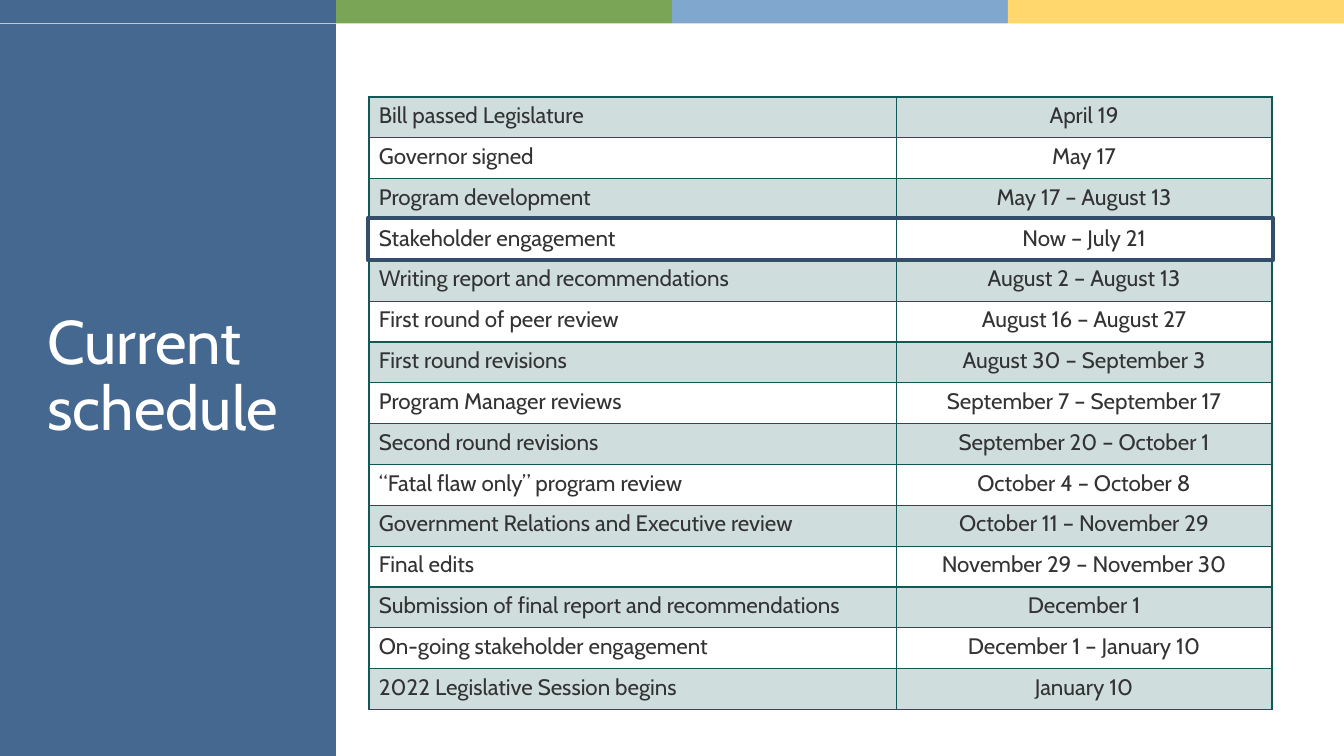
from dataclasses import dataclass

from lxml import etree
from pptx import Presentation
from pptx import util as u
from pptx.dml.color import RGBColor
from pptx.enum import shapes, text
from pptx.oxml.ns import qn

SLIDE_WIDTH = u.Inches(40 / 3)
SLIDE_HEIGHT = u.Inches(7.5)
FONT = "Cabin"

BLUE = RGBColor(0x44, 0x68, 0x8F)
GREEN = RGBColor(0x7A, 0xA4, 0x56)
LIGHT_BLUE = RGBColor(0x80, 0xA8, 0xCE)
YELLOW = RGBColor(0xFF, 0xD7, 0x6D)
TEAL = RGBColor(0x13, 0x57, 0x56)
NAVY = RGBColor(0x33, 0x4E, 0x6B)
INK = RGBColor(0x33, 0x33, 0x33)
WHITE = RGBColor(0xFF, 0xFF, 0xFF)


@dataclass(frozen=True)
class Area:
    """Position and size as percentages of the slide."""
    left: float
    top: float
    width: float
    height: float

    def emu(self) -> tuple[int, int, int, int]:
        return (across(self.left), down(self.top),
                across(self.width), down(self.height))


@dataclass(frozen=True)
class Step:
    task: str
    dates: str


def across(percent: float) -> int:
    return round(SLIDE_WIDTH * percent / 100)


def down(percent: float) -> int:
    return round(SLIDE_HEIGHT * percent / 100)


STRIPE_COLOURS = [BLUE, GREEN, LIGHT_BLUE, YELLOW]
STRIPE_WIDTH = 100 / len(STRIPE_COLOURS)
SIDEBAR = Area(0, 3.2, STRIPE_WIDTH, 96.8)
TITLE = Area(2.78, 10, 19.88, 79.87)
SCHEDULE = Area(27.45, 12.83, 67.2, 81.07)
COLUMN_WIDTHS = [39.23, 27.97]
CURRENT_STEP = Area(27.38, 28.8, 67.35, 5.6)

STEPS = [
    Step("Bill passed Legislature", "April 19"),
    Step("Governor signed", "May 17"),
    Step("Program development", "May 17 – August 13"),
    Step("Stakeholder engagement", "Now – July 21"),
    Step("Writing report and recommendations", "August 2 – August 13"),
    Step("First round of peer review", "August 16 – August 27"),
    Step("First round revisions", "August 30 – September 3"),
    Step("Program Manager reviews", "September 7 – September 17"),
    Step("Second round revisions", "September 20 – October 1"),
    Step("“Fatal flaw only” program review", "October 4 – October 8"),
    Step("Government Relations and Executive review", "October 11 – November 29"),
    Step("Final edits", "November 29 – November 30"),
    Step("Submission of final report and recommendations", "December 1"),
    Step("On-going stakeholder engagement", "December 1 – January 10"),
    Step("2022 Legislative Session begins", "January 10"),
]


def add_rectangle(slide, area: Area):
    rectangle = slide.shapes.add_shape(shapes.MSO_SHAPE.RECTANGLE, *area.emu())
    rectangle.shadow.inherit = False
    return rectangle


def add_block(slide, area: Area, colour: RGBColor) -> None:
    block = add_rectangle(slide, area)
    block.fill.solid()
    block.fill.fore_color.rgb = colour
    block.line.fill.background()


def add_outline(slide, area: Area) -> None:
    outline = add_rectangle(slide, area)
    outline.fill.background()
    outline.line.color.rgb = NAVY
    outline.line.width = u.Pt(3)


def format_text(paragraph, size: int, colour: RGBColor) -> None:
    for run in paragraph.runs:
        run.font.name = FONT
        run.font.size = u.Pt(size)
        run.font.color.rgb = colour


def add_title(slide, area: Area, wording: str) -> None:
    frame = slide.shapes.add_textbox(*area.emu()).text_frame
    frame.word_wrap = True
    frame.vertical_anchor = text.MSO_ANCHOR.MIDDLE
    frame.text = wording
    frame.paragraphs[0].line_spacing = 0.9
    format_text(frame.paragraphs[0], 44, WHITE)


def add_borders(cell) -> None:
    properties = cell._tc.get_or_add_tcPr()
    for side in ("a:lnL", "a:lnR", "a:lnT", "a:lnB"):
        border = etree.SubElement(properties, qn(side), w=str(u.Pt(1)))
        fill = etree.SubElement(border, qn("a:solidFill"))
        etree.SubElement(fill, qn("a:srgbClr"), val=str(TEAL))


def shade(cell) -> None:
    cell.fill.solid()
    cell.fill.fore_color.rgb = TEAL
    colour = cell._tc.tcPr.find(f"{qn('a:solidFill')}/{qn('a:srgbClr')}")
    etree.SubElement(colour, qn("a:alpha"), val="20000")


def fill_cell(cell, wording: str, shaded: bool, alignment) -> None:
    add_borders(cell)
    if shaded:
        shade(cell)
    else:
        cell.fill.background()
    cell.text_frame.text = wording
    paragraph = cell.text_frame.paragraphs[0]
    paragraph.alignment = alignment
    format_text(paragraph, 16, INK)


def add_schedule(slide, area: Area, steps: list[Step]) -> None:
    schedule = slide.shapes.add_table(
        len(steps), len(COLUMN_WIDTHS), *area.emu()).table
    schedule.first_row = False
    schedule.horz_banding = False
    for column, width in zip(schedule.columns, COLUMN_WIDTHS):
        column.width = across(width)
    for index, step in enumerate(steps):
        shaded = index % 2 == 0
        fill_cell(schedule.cell(index, 0), step.task, shaded, text.PP_ALIGN.LEFT)
        fill_cell(schedule.cell(index, 1), step.dates, shaded, text.PP_ALIGN.CENTER)


def main() -> None:
    presentation = Presentation()
    presentation.slide_width = SLIDE_WIDTH
    presentation.slide_height = SLIDE_HEIGHT
    slide = presentation.slides.add_slide(presentation.slide_layouts[6])

    for index, colour in enumerate(STRIPE_COLOURS):
        add_block(slide, Area(index * STRIPE_WIDTH, 0, STRIPE_WIDTH, 3.1), colour)
    add_block(slide, SIDEBAR, BLUE)
    add_schedule(slide, SCHEDULE, STEPS)
    add_title(slide, TITLE, "Current schedule")
    add_outline(slide, CURRENT_STEP)

    presentation.save("out.pptx")


if __name__ == "__main__":
    main()
